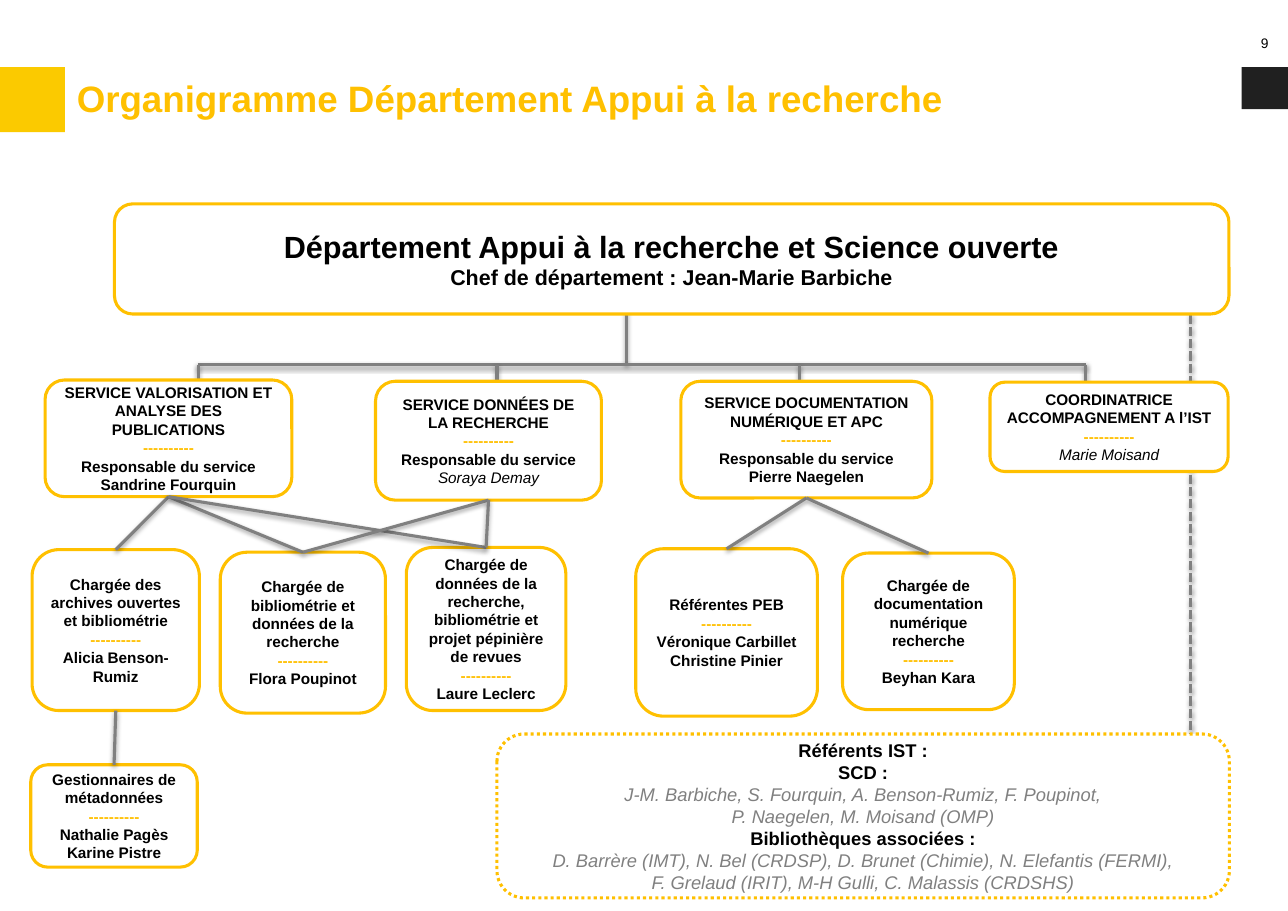
from dataclasses import dataclass

from pptx import Presentation
from pptx.dml.color import RGBColor
from pptx.enum.dml import MSO_LINE
from pptx.enum.shapes import MSO_CONNECTOR, MSO_SHAPE
from pptx.enum.text import MSO_ANCHOR, PP_ALIGN
from pptx.oxml import parse_xml
from pptx.oxml.ns import nsdecls
from pptx.util import Cm, Pt

RECT, ROUNDED = MSO_SHAPE.RECTANGLE, MSO_SHAPE.ROUNDED_RECTANGLE
STRAIGHT = MSO_CONNECTOR.STRAIGHT
DASH, DOT = MSO_LINE.SQUARE_DOT, MSO_LINE.ROUND_DOT
CENTER, LEFT = PP_ALIGN.CENTER, PP_ALIGN.LEFT
TOP, MIDDLE = MSO_ANCHOR.TOP, MSO_ANCHOR.MIDDLE
SITE_TOP, SITE_BOTTOM = 0, 2


@dataclass(frozen=True)
class Theme:
    font: str = "Arial"
    gold: RGBColor = RGBColor(0xFF, 0xC0, 0x00)
    yellow: RGBColor = RGBColor(0xFB, 0xCA, 0x00)
    dark: RGBColor = RGBColor(0x20, 0x20, 0x20)
    black: RGBColor = RGBColor(0, 0, 0)
    grey: RGBColor = RGBColor(0x80, 0x80, 0x80)
    white: RGBColor = RGBColor(0xFF, 0xFF, 0xFF)
    title: int = 24
    department: int = 20
    head: int = 14
    referents: int = 12
    card: int = 10
    page: int = 9
    stroke: int = 2


T = Theme()

# key: (left, top, width, height) in cm, heading, names in bold, names in italics
CARDS = {
    "coordination": ((22.83, 8.81, 5.49, 2.06),
                     "COORDINATRICE ACCOMPAGNEMENT A l’IST", [], ["Marie Moisand"]),
    "valorisation": ((1.04, 8.76, 5.69, 2.69),
                     "SERVICE VALORISATION ET ANALYSE DES PUBLICATIONS",
                     ["Responsable du service", "Sandrine Fourquin"], []),
    "donnees": ((8.66, 8.79, 5.21, 2.74), "SERVICE DONNÉES DE LA RECHERCHE",
                ["Responsable du service"], ["Soraya Demay"]),
    "documentation": ((15.7, 8.79, 5.79, 2.69),
                      "SERVICE DOCUMENTATION NUMÉRIQUE ET APC",
                      ["Responsable du service", "Pierre Naegelen"], []),
    "archives": ((0.74, 12.67, 3.86, 3.71),
                 "Chargée des archives ouvertes et bibliométrie",
                 ["Alicia Benson-Rumiz"], []),
    "bibliometrie": ((5.08, 12.73, 3.81, 3.71),
                     "Chargée de bibliométrie et données de la recherche",
                     ["Flora Poupinot"], []),
    "pepiniere": ((9.37, 12.62, 3.68, 3.76),
                  "Chargée de données de la recherche, bibliométrie et projet "
                  "pépinière de revues", ["Laure Leclerc"], []),
    "peb": ((14.66, 12.65, 4.19, 3.86), "Référentes PEB",
            ["Véronique Carbillet", "Christine Pinier"], []),
    "numerique": ((19.43, 12.75, 3.96, 3.61),
                  "Chargée de documentation numérique recherche",
                  ["Beyhan Kara"], []),
    "metadonnees": ((0.71, 17.63, 3.84, 2.36), "Gestionnaires de métadonnées",
                    ["Nathalie Pagès", "Karine Pistre"], []),
}

LINKS = [
    ("valorisation", "archives"), ("valorisation", "bibliometrie"),
    ("valorisation", "pepiniere"), ("donnees", "bibliometrie"),
    ("donnees", "pepiniere"), ("documentation", "peb"),
    ("documentation", "numerique"), ("archives", "metadonnees"),
]

REFERENTS = [
    ("Référents IST :", True),
    ("SCD :", True),
    ("J-M. Barbiche, S. Fourquin, A. Benson-Rumiz, F. Poupinot,", False),
    ("P. Naegelen, M. Moisand (OMP)", False),
    ("Bibliothèques associées :", True),
    ("D. Barrère (IMT), N. Bel (CRDSP), D. Brunet (Chimie), N. Elefantis (FERMI),", False),
    ("F. Grelaud (IRIT), M-H Gulli, C. Malassis (CRDSHS)", False),
]

TRUNK_X, TRUNK_TOP, BUS_Y = 14.45, 6.22, 8.41
BRANCHES_X, BRANCH_END = (4.57, 11.46, 18.44, 25.04), 10.46


def line(text, size, color=T.black, bold=True, italic=False):
    """Describe one paragraph for write()."""
    return text, size, color, bold, italic


def write(tf, lines, align=CENTER, anchor=MIDDLE):
    tf.word_wrap = True
    tf.vertical_anchor = anchor
    for i, (text, size, color, bold, italic) in enumerate(lines):
        p = tf.paragraphs[0] if i == 0 else tf.add_paragraph()
        p.alignment = align
        r = p.add_run()
        r.text = text
        r.font.name, r.font.size = T.font, Pt(size)
        r.font.bold, r.font.italic = bold, italic
        r.font.color.rgb = color


def add_block(s, box, color):
    sp = s.shapes.add_shape(RECT, *map(Cm, box))
    sp.shadow.inherit = False
    sp.fill.solid()
    sp.fill.fore_color.rgb = color
    sp.line.fill.background()


def add_card(s, box, lines, dash=None):
    sp = s.shapes.add_shape(ROUNDED, *map(Cm, box))
    sp.shadow.inherit = False
    sp.fill.solid()
    sp.fill.fore_color.rgb = T.white
    sp.line.color.rgb = T.gold
    sp.line.width = Pt(T.stroke)
    if dash:
        sp.line.dash_style = dash
    write(sp.text_frame, lines)
    return sp


def add_line(s, x1, y1, x2, y2, dash=None):
    """Draw a grey line with a soft shadow below it; lengths in cm."""
    cx = s.shapes.add_connector(STRAIGHT, Cm(x1), Cm(y1), Cm(x2), Cm(y2))
    cx.line.color.rgb = T.grey
    cx.line.width = Pt(T.stroke)
    if dash:
        cx.line.dash_style = dash
    cx._element.spPr.append(parse_xml(
        f'<a:effectLst {nsdecls("a")}>'
        f'<a:outerShdw blurRad="{Pt(3.1)}" dist="{Pt(1.6)}" dir="5400000" rotWithShape="0">'
        '<a:srgbClr val="000000"><a:alpha val="38000"/></a:srgbClr>'
        '</a:outerShdw></a:effectLst>'))
    return cx


def add_link(s, parent, child):
    cx = add_line(s, 0, 0, 1, 1)
    cx.begin_connect(parent, SITE_BOTTOM)
    cx.end_connect(child, SITE_TOP)


def add_header(s):
    add_block(s, (28.63, 1.55, 1.07, 0.97), T.dark)
    add_block(s, (0, 1.55, 1.5, 1.5), T.yellow)
    title = s.shapes.title
    title.left, title.top, title.width, title.height = map(Cm, (1.5, 1.55, 28.17, 1.55))
    tf = title.text_frame
    tf.margin_left, tf.margin_top = Cm(0.27), Cm(0.2)
    write(tf, [line("Organigramme Département Appui à la recherche", T.title, T.gold)],
          LEFT, TOP)
    page = s.shapes.add_textbox(*map(Cm, (28.63, 0.43, 1.07, 1.12)))
    write(page.text_frame, [line("9", T.page, bold=False)])


def add_trunk(s):
    """Draw the lines that run behind the cards."""
    add_line(s, 27.46, 6.68, 27.46, 17.17, DASH)
    add_line(s, TRUNK_X, TRUNK_TOP, TRUNK_X, BUS_Y)
    add_line(s, BRANCHES_X[0], BUS_Y, BRANCHES_X[-1], BUS_Y)
    for x in BRANCHES_X:
        add_line(s, x, BUS_Y, x, BRANCH_END)


def main():
    prs = Presentation()
    prs.slide_width, prs.slide_height = Cm(29.7), Cm(21)
    s = prs.slides.add_slide(prs.slide_layouts[5])
    add_header(s)
    add_trunk(s)
    add_card(s, (2.64, 4.7, 25.7, 2.54), [
        line("Département Appui à la recherche et Science ouverte", T.department),
        line("Chef de département : Jean-Marie Barbiche", T.head)])
    add_card(s, (11.46, 16.92, 16.89, 3.78), [
        line(text, T.referents, T.black if strong else T.grey, strong, not strong)
        for text, strong in REFERENTS], DOT)
    cards = {}
    for key, (box, heading, bold_names, italic_names) in CARDS.items():
        lines = [line(heading, T.card), line("-" * 10, T.card, T.gold)]
        lines += [line(name, T.card) for name in bold_names]
        lines += [line(name, T.card, bold=False, italic=True) for name in italic_names]
        cards[key] = add_card(s, box, lines)
    for parent, child in LINKS:
        add_link(s, cards[parent], cards[child])
    prs.save("out.pptx")


if __name__ == "__main__":
    main()
